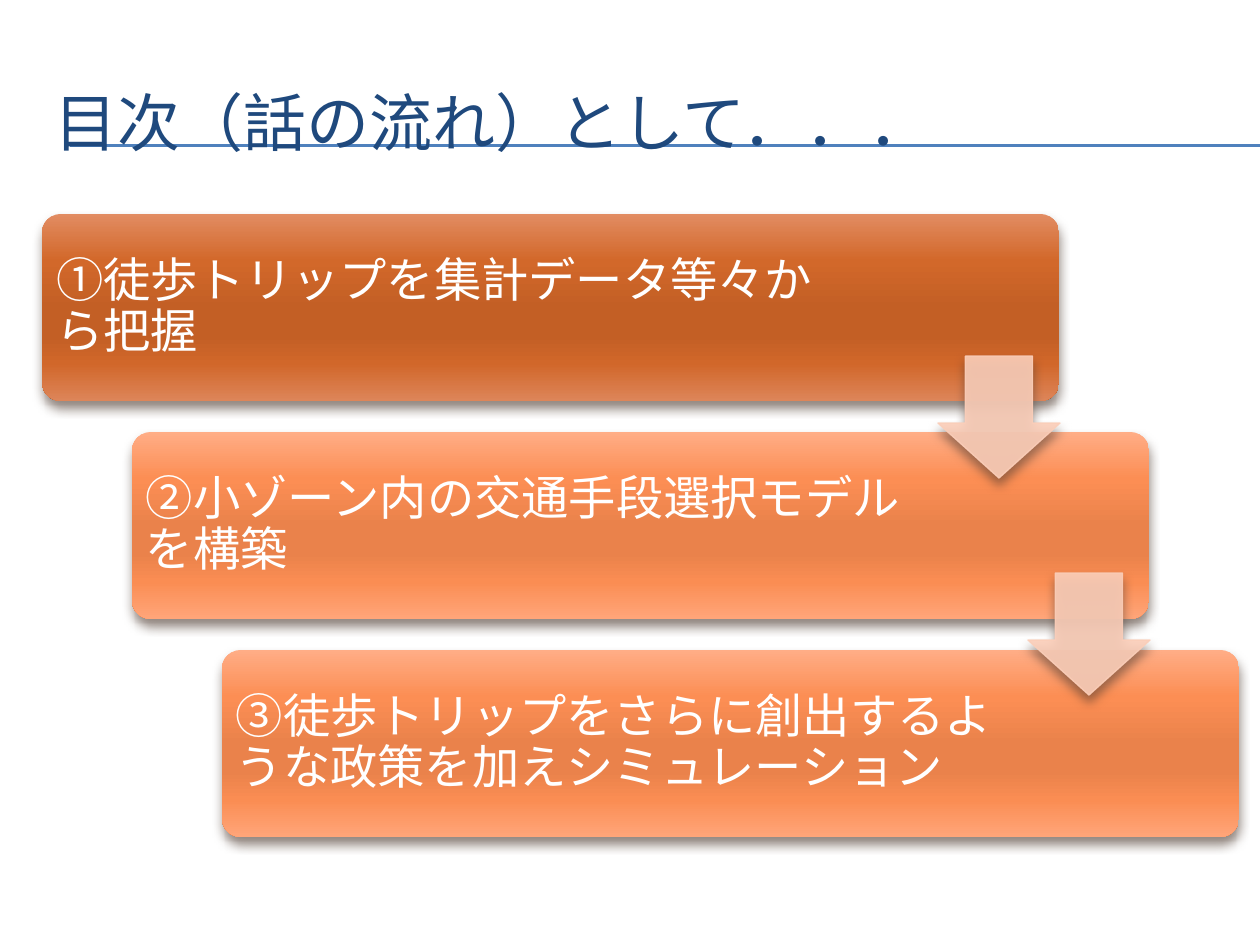
from dataclasses import dataclass

from lxml import etree
from pptx import Presentation
from pptx.dml.color import RGBColor
from pptx.enum.shapes import MSO_CONNECTOR, MSO_SHAPE
from pptx.enum.text import MSO_ANCHOR
from pptx.oxml.ns import qn
from pptx.util import Emu, Pt

ROUNDED = MSO_SHAPE.ROUNDED_RECTANGLE
DOWN_ARROW = MSO_SHAPE.DOWN_ARROW
STRAIGHT = MSO_CONNECTOR.STRAIGHT
MIDDLE = MSO_ANCHOR.MIDDLE

PX = 914400 / 126
FONT = "Lato"
WHITE, NAVY, BLUE = "FFFFFF", "1F497D", "4F81BD"
PEACH, SHADOW = "FBCEB9", "4E3B30"
STOPS = (0, 25, 50, 65, 80, 100)
DARK = ("E28C62", "D2682A", "C35F25", "C35F25", "D1672A", "DD8559")
LIGHT = ("FFAD86", "FC8E54", "EA824B", "EA824B", "FA8D53", "FFA579")

CARD_LEFT, CARD_TOP, CARD_WIDTH, CARD_HEIGHT = 42, 214, 1017, 187
STEP_X, STEP_Y = 90, 218
ARROW_LEFT, ARROW_TOP, ARROW_SIZE = 938, 356, 122
ARROW_STEP_Y = 217


@dataclass
class Step:
    text: str
    text_width: int
    gradient: tuple[str, ...]


STEPS = [
    Step("①徒歩トリップを集計データ等々から把握", 827, DARK),
    Step("②小ゾーン内の交通手段選択モデルを構築", 806, LIGHT),
    Step("③徒歩トリップをさらに創出するような政策を加えシミュレーション", 806, LIGHT),
]


def px(value: int) -> Emu:
    return Emu(round(value * PX))


def color(value: str) -> RGBColor:
    return RGBColor.from_string(value)


def add_color(parent, value: str, alpha: int = 100) -> None:
    element = etree.SubElement(parent, qn("a:srgbClr"), val=value)
    if alpha < 100:
        etree.SubElement(element, qn("a:alpha"), val=str(alpha * 1000))


def add_shadow(shape) -> None:
    shape.shadow.inherit = False
    effects = shape._element.spPr.find(qn("a:effectLst"))
    outer = etree.SubElement(
        effects, qn("a:outerShdw"), blurRad=str(Pt(6)), dist=str(Pt(4)),
        dir="5400000", rotWithShape="0")
    add_color(outer, SHADOW, 60)


def fill_gradient(shape, colors: tuple[str, ...]) -> None:
    shape.fill.solid()
    properties = shape._element.spPr
    gradient = etree.Element(qn("a:gradFill"), rotWithShape="1")
    stops = etree.SubElement(gradient, qn("a:gsLst"))
    for position, value in zip(STOPS, colors):
        stop = etree.SubElement(stops, qn("a:gs"), pos=str(position * 1000))
        add_color(stop, value)
    etree.SubElement(gradient, qn("a:lin"), ang="5400000", scaled="0")
    properties.replace(properties.find(qn("a:solidFill")), gradient)


def add_rule(slide, y: int) -> None:
    rule = slide.shapes.add_connector(STRAIGHT, px(70), px(y), px(1260), px(y))
    rule.line.color.rgb = color(BLUE)
    rule.line.width = Pt(0.75)
    etree.SubElement(rule._element.spPr, qn("a:effectLst"))


def add_text(slide, text: str, left: int, top: int, width: int, height: int,
             size: int, text_color: str):
    box = slide.shapes.add_textbox(px(left), px(top), px(width), px(height))
    frame = box.text_frame
    frame.word_wrap = True
    frame.vertical_anchor = MIDDLE
    frame.text = text
    font = frame.paragraphs[0].runs[0].font
    font.name = FONT
    font.size = Pt(size)
    font.color.rgb = color(text_color)
    return frame


def add_card(slide, step: Step, left: int, top: int) -> None:
    card = slide.shapes.add_shape(
        ROUNDED, px(left), px(top), px(CARD_WIDTH), px(CARD_HEIGHT))
    card.adjustments[0] = 0.1
    fill_gradient(card, step.gradient)
    card.line.fill.background()
    add_shadow(card)
    frame = add_text(slide, step.text, left, top, step.text_width, CARD_HEIGHT,
                     27, WHITE)
    frame.margin_left = frame.margin_right = px(14)
    frame.margin_top = frame.margin_bottom = px(14)
    paragraph = frame.paragraphs[0]
    paragraph.line_spacing = 0.9
    paragraph.space_after = Pt(9)


def add_arrow(slide, left: int, top: int) -> None:
    arrow = slide.shapes.add_shape(
        DOWN_ARROW, px(left), px(top), px(ARROW_SIZE), px(ARROW_SIZE))
    arrow.adjustments[0] = 0.55
    arrow.adjustments[1] = 0.45
    arrow.fill.solid()
    arrow.fill.fore_color.rgb = color(PEACH)
    arrow.line.color.rgb = color(PEACH)
    arrow.line.width = Pt(0.79)
    for element in arrow._element.spPr.iter(qn("a:srgbClr")):
        etree.SubElement(element, qn("a:alpha"), val="90000")
    add_shadow(arrow)


def main() -> None:
    presentation = Presentation()
    presentation.slide_width = px(1260)
    presentation.slide_height = px(945)
    slide = presentation.slides.add_slide(presentation.slide_layouts[6])

    for y in (145, 146):
        add_rule(slide, y)
    add_text(slide, "目次（話の流れ）として．．．", 42, 63, 1197, 116, 36, NAVY)

    for index, step in enumerate(STEPS):
        add_card(slide, step, CARD_LEFT + index * STEP_X,
                 CARD_TOP + index * STEP_Y)
    for index in range(len(STEPS) - 1):
        add_arrow(slide, ARROW_LEFT + index * STEP_X,
                  ARROW_TOP + index * ARROW_STEP_Y)

    presentation.save("out.pptx")


if __name__ == "__main__":
    main()
